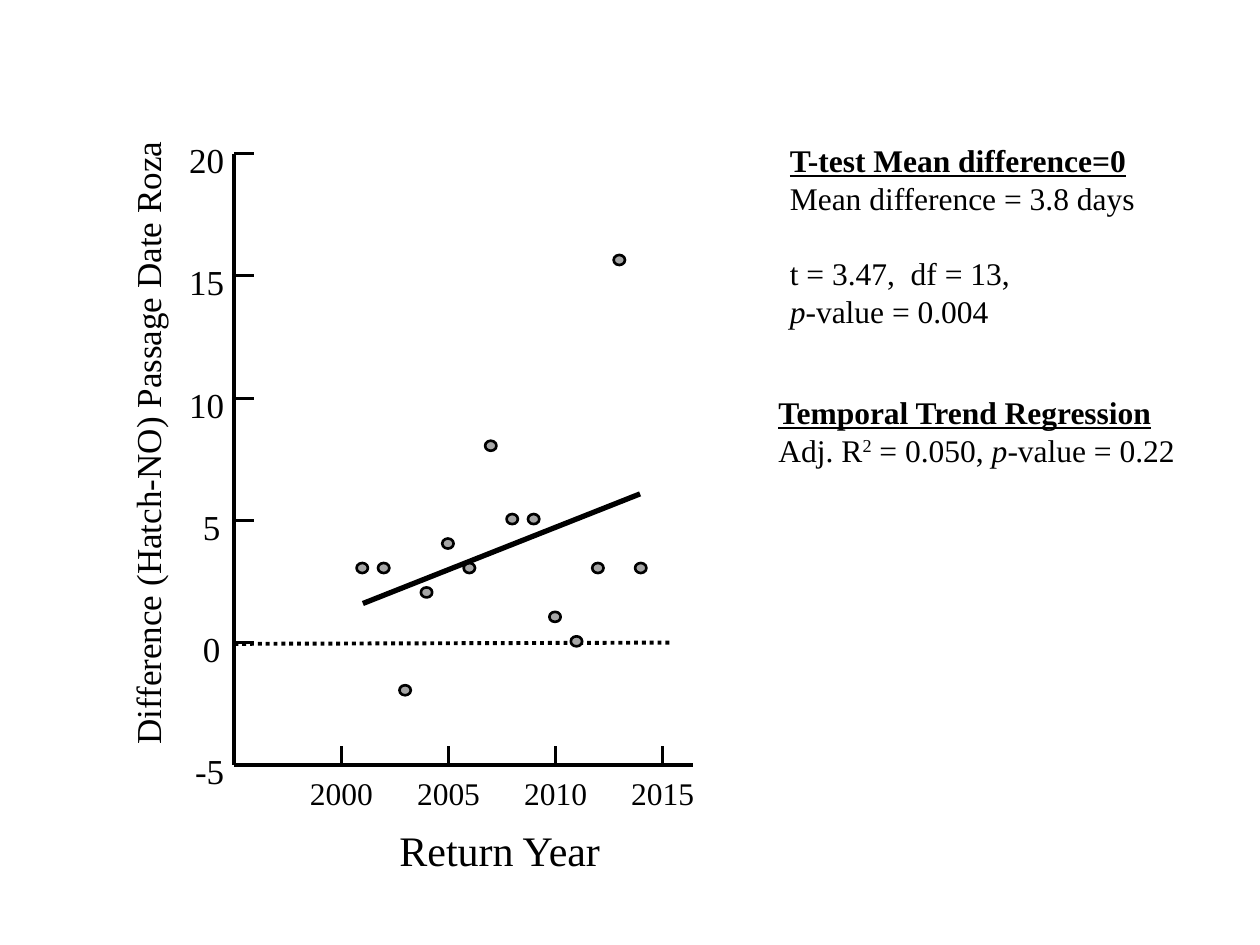
"""Build a slide with a scatter of passage date differences and its test results."""
from dataclasses import dataclass

from lxml import etree
from pptx import Presentation
from pptx.dml.color import RGBColor
from pptx.enum import dml, shapes, text
from pptx.util import Inches, Pt


@dataclass(frozen=True)
class Theme:
    font: str = "Times New Roman"
    ink: RGBColor = RGBColor(0, 0, 0)
    dot: RGBColor = RGBColor(0xA6, 0xA6, 0xA6)
    small: int = 18
    mid: int = 20
    large: int = 24
    axis: float = 2.25
    tick: float = 1.75
    trend: float = 3
    rim: float = 1.5


@dataclass(frozen=True)
class Box:
    left: float
    top: float
    width: float
    height: float


@dataclass(frozen=True)
class Run:
    words: str
    slant: bool = False
    raised: bool = False


@dataclass(frozen=True)
class Para:
    runs: tuple[Run, ...]
    head: bool = False
    gap: float = 0


THEME = Theme()
LEFT, BASE, TICK = 1.86, 6.07, 0.15
DIFFS = (3, 3, -2, 2, 4, 3, 8, 5, 5, 1, 0, 3, 15.6, 3)
TEST = (
    Para((Run("T-test Mean difference=0"),), head=True),
    Para((Run("Mean difference = 3.8 days"),)),
    Para((Run("t = 3.47,  df = 13,"),), gap=21.5),
    Para((Run("p", slant=True), Run("-value = 0.004"))),
)
TREND = (
    Para((Run("Temporal Trend Regression"),), head=True),
    Para((Run("Adj. R"), Run("2", raised=True), Run(" = 0.050,"),
          Run(" p", slant=True), Run("-value = 0.22"))),
)


def year_x(year: float) -> float:
    """Return the horizontal place of a year."""
    return 2.71 + 0.85 * (year - 2000) / 5


def diff_y(diff: float) -> float:
    """Return the vertical place of a difference in days."""
    return 5.1 - 0.97 * diff / 5


def rule(slide, x1: float, y1: float, x2: float, y2: float, weight: float):
    """Draw a straight line and return it."""
    line = slide.shapes.add_connector(
        shapes.MSO_CONNECTOR.STRAIGHT, *map(Inches, (x1, y1, x2, y2)))
    line.line.color.rgb = THEME.ink
    line.line.width = Pt(weight)
    props = line._element.spPr
    etree.SubElement(props, props.tag.split("}")[0].replace(
        "presentationml", "drawingml") + "}effectLst")
    return line


def style(para, size: int) -> None:
    """Set the font of a paragraph."""
    para.font.name = THEME.font
    para.font.size = Pt(size)
    para.font.color.rgb = THEME.ink


def label(slide, words: str, box: Box, size: int, align=text.PP_ALIGN.LEFT):
    """Add a one-line text without margins and return it."""
    shape = slide.shapes.add_textbox(
        *map(Inches, (box.left, box.top, box.width, box.height)))
    frame = shape.text_frame
    frame.margin_left = frame.margin_right = 0
    frame.margin_top = frame.margin_bottom = 0
    frame.word_wrap = False
    para = frame.paragraphs[0]
    para.text = words
    para.alignment = align
    style(para, size)
    return shape


def block(slide, box: Box, paras: tuple[Para, ...]) -> None:
    """Add a text block with a heading and results."""
    frame = slide.shapes.add_textbox(
        *map(Inches, (box.left, box.top, box.width, box.height))).text_frame
    frame.word_wrap = True
    for i, item in enumerate(paras):
        para = frame.add_paragraph() if i else frame.paragraphs[0]
        style(para, THEME.small)
        para.font.bold = para.font.underline = item.head
        para.space_before = Pt(item.gap)
        for part in item.runs:
            run = para.add_run()
            run.text = part.words
            if part.slant:
                run.font.italic = True
            if part.raised:
                run._r.get_or_add_rPr().set("baseline", "30000")


def dot(slide, year: int, diff: float) -> None:
    """Mark the difference of one year."""
    mark = slide.shapes.add_shape(
        shapes.MSO_SHAPE.OVAL, Inches(year_x(year) - 0.05),
        Inches(diff_y(diff) - 0.05), Inches(0.09), Inches(0.08))
    mark.shadow.inherit = False
    mark.fill.solid()
    mark.fill.fore_color.rgb = THEME.dot
    mark.line.color.rgb = THEME.ink
    mark.line.width = Pt(THEME.rim)


def axes(slide) -> None:
    """Draw both axes with ticks, labels and titles."""
    zero = rule(slide, LEFT, 5.11, 5.34, 5.1, THEME.axis)
    zero.line.dash_style = dml.MSO_LINE.ROUND_DOT
    rule(slide, LEFT, BASE, 5.5, BASE, THEME.axis)
    rule(slide, LEFT, BASE, LEFT, diff_y(20), THEME.axis)
    for year in range(2000, 2016, 5):
        x = year_x(year)
        rule(slide, x, BASE, x, BASE - TICK, THEME.tick)
        label(slide, str(year), Box(x - 0.25, 6.14, 0.5, 0.3), THEME.small)
    for diff in range(-5, 21, 5):
        y = diff_y(diff)
        rule(slide, LEFT, y, LEFT + TICK + 0.01, y, THEME.tick)
        right = 1.75 if 0 <= diff < 10 else 1.78
        label(slide, str(diff), Box(right - 0.4, y - 0.12, 0.4, 0.34),
              THEME.mid, text.PP_ALIGN.RIGHT)
    label(slide, "Return Year", Box(3.17, 6.54, 1.61, 0.4), THEME.large)
    side = label(slide, "Difference (Hatch-NO) Passage Date Roza",
                 Box(-1.24, 3.33, 4.82, 0.34), THEME.mid)
    side.rotation = 270


def main() -> None:
    """Build and save the slide."""
    deck = Presentation()
    deck.slide_width, deck.slide_height = Inches(10), Inches(7.5)
    slide = deck.slides.add_slide(deck.slide_layouts[6])
    axes(slide)
    for year, diff in enumerate(DIFFS, 2001):
        dot(slide, year, diff)
    rule(slide, 2.88, 4.79, 5.08, 3.92, THEME.trend)
    block(slide, Box(6.17, 1.07, 3.08, 1.61), TEST)
    block(slide, Box(6.08, 3.07, 3.45, 0.71), TREND)
    deck.save("out.pptx")


if __name__ == "__main__":
    main()
